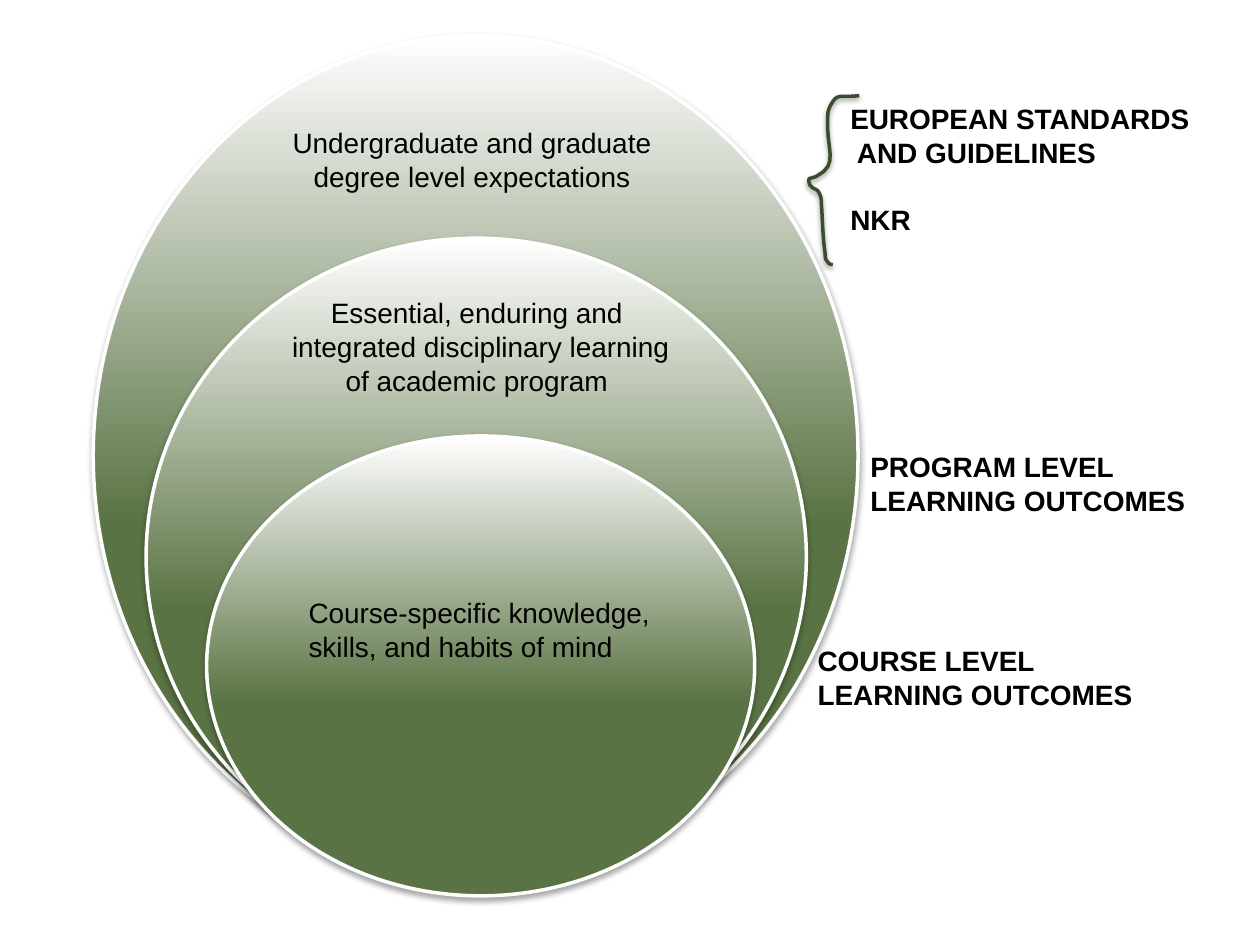
from lxml import etree
from pptx import Presentation
from pptx import util as u
from pptx.dml.color import RGBColor
from pptx.enum import shapes, text
from pptx.oxml.ns import qn

GREEN, DARK_GREEN, WHITE, BLACK = "5A7344", "3C4D2D", "FFFFFF", "000000"

RINGS = [
    (0.44, 0.58, 6.67, 6.07),
    (1.25, 1.8, 5.06, 5.24),
    (1.99, 3.11, 3.65, 4.35),
]
RING_TEXTS = [
    ((1.97, 0.95, 3.55, 0.64), ["Undergraduate and graduate degree level expectations"], True),
    ((2.2, 2.3, 3.23, 1.21),
     ["Essential, enduring and ", "integrated disciplinary learning ", "of academic program "], True),
    ((2.35, 4.68, 2.95, 0.94), ["Course-specific knowledge,", "skills, and habits of mind"], False),
]
LEVEL_LABELS = [
    ((6.81, 3.52, 2.73, 0.94), ["PROGRAM LEVEL", "LEARNING OUTCOMES"]),
    ((6.39, 5.06, 2.73, 0.91), ["COURSE LEVEL", "LEARNING OUTCOMES"]),
]
STANDARDS_BOX = (6.65, 0.76, 2.93, 1.48)
BRACE_BOX = (6.42, 0.76, 0.41, 1.35)
BRACE_START = (0.4, 0)
BRACE_CURVES = [
    ((0.24, 0.02), (0.23, -0.03), (0.17, 0.08)),
    ((0.16, 0.1), (0.15, 0.13), (0.15, 0.15)),
    ((0.13, 0.43), (0.25, 0.54), (0.06, 0.64)),
    ((0.04, 0.65), (0.02, 0.65), (0, 0.66)),
    ((0, 0.68), (0, 0.71), (0.02, 0.72)),
    ((0.03, 0.74), (0.07, 0.74), (0.08, 0.77)),
    ((0.1, 0.8), (0.1, 0.84), (0.1, 0.87)),
    ((0.11, 1), (0.11, 1.13), (0.13, 1.26)),
    ((0.13, 1.28), (0.13, 1.3), (0.15, 1.32)),
    ((0.16, 1.34), (0.18, 1.34), (0.19, 1.34)),
]


def rgb(value):
    """Return the colour for a hex string."""
    return RGBColor.from_string(value)


def inches(box):
    """Convert the numbers of a box to lengths."""
    return [u.Inches(value) for value in box]


def add_shadow(shape, opacity, distance):
    """Give a shape a soft shadow that falls straight down."""
    shape.shadow.inherit = False
    effects = shape._element.spPr.find(qn("a:effectLst"))
    shadow = etree.SubElement(
        effects, qn("a:outerShdw"), blurRad=str(u.Pt(3.1)), dist=str(u.Pt(distance)),
        dir="5400000", rotWithShape="0")
    colour = etree.SubElement(shadow, qn("a:srgbClr"), val=BLACK)
    etree.SubElement(colour, qn("a:alpha"), val=str(opacity * 1000))


def set_line(shape, colour):
    """Outline a shape with a two-point line."""
    shape.line.color.rgb = rgb(colour)
    shape.line.width = u.Pt(2)


def add_ring(page, box):
    """Add an ellipse that fades from green at the bottom to white at the top."""
    ring = page.shapes.add_shape(shapes.MSO_SHAPE.OVAL, *inches(box))
    ring.rotation = 270
    ring.fill.gradient()
    ring.fill.gradient_angle = 0
    for stop, (position, colour) in zip(ring.fill.gradient_stops, [(0.42, GREEN), (1, WHITE)]):
        stop.position = position
        stop.color.rgb = rgb(colour)
    set_line(ring, WHITE)
    add_shadow(ring, 35, 1.8)


def add_text(page, box, lines, centred=False, bold=False):
    """Add a text box with one paragraph per line and return its paragraphs."""
    frame = page.shapes.add_textbox(*inches(box)).text_frame
    frame.word_wrap = True
    frame.text = "\n".join(lines)
    for para in frame.paragraphs:
        para.alignment = text.PP_ALIGN.CENTER if centred else text.PP_ALIGN.LEFT
        para.font.name = "Arial"
        para.font.size = u.Pt(16)
        para.font.bold = bold
        para.font.color.rgb = rgb(BLACK)
    return frame.paragraphs


def bezier(points, t):
    """Return the point at t on a cubic curve."""
    weights = ((1 - t) ** 3, 3 * t * (1 - t) ** 2, 3 * t * t * (1 - t), t ** 3)
    return tuple(sum(w * p[axis] for w, p in zip(weights, points)) for axis in (0, 1))


def add_brace(page, box, steps=8):
    """Draw the hand-drawn brace inside its box."""
    left, top = box[:2]

    def place(point):
        return u.Inches(left + point[0]), u.Inches(top + point[1])

    builder = page.shapes.build_freeform(*place(BRACE_START))
    start = BRACE_START
    for curve in BRACE_CURVES:
        points = [bezier((start, *curve), step / steps) for step in range(1, steps + 1)]
        builder.add_line_segments([place(point) for point in points], close=False)
        start = curve[-1]
    brace = builder.convert_to_shape()
    brace.fill.background()
    set_line(brace, DARK_GREEN)
    add_shadow(brace, 38, 1.6)


def add_standards(page, box):
    """Add the label of the outer ring, with its last line set apart."""
    lines = ["EUROPEAN STANDARDS", " AND GUIDELINES", "NKR"]
    add_text(page, box, lines, bold=True)[-1].space_before = u.Pt(19)


def main():
    """Build the slide of nested learning outcomes."""
    deck = Presentation()
    deck.slide_width, deck.slide_height = u.Inches(10), u.Inches(7.5)
    page = deck.slides.add_slide(deck.slide_layouts[6])
    for box in RINGS:
        add_ring(page, box)
    for box, lines, centred in RING_TEXTS:
        add_text(page, box, lines, centred=centred)
    add_standards(page, STANDARDS_BOX)
    add_brace(page, BRACE_BOX)
    for box, lines in LEVEL_LABELS:
        add_text(page, box, lines, bold=True)
    deck.save("out.pptx")


if __name__ == "__main__":
    main()
